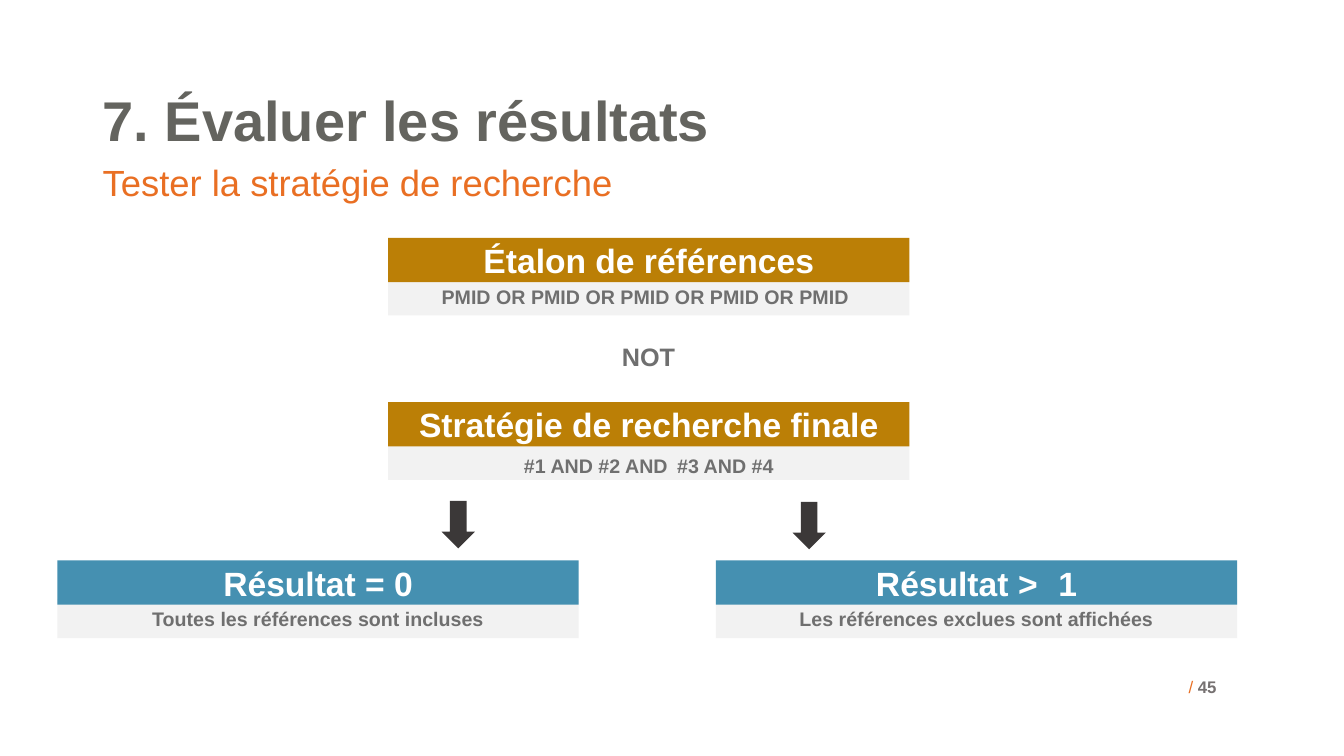
from pptx import Presentation
from pptx.dml.color import RGBColor
from pptx.enum.shapes import MSO_SHAPE
from pptx.enum.text import MSO_ANCHOR, PP_ALIGN
from pptx.util import Inches, Pt

WHITE = RGBColor(0xFF, 0xFF, 0xFF)
TITLE_GRAY = RGBColor(0x64, 0x64, 0x5F)
ORANGE = RGBColor(0xE9, 0x6F, 0x23)
NUMBER_GRAY = RGBColor(0x76, 0x71, 0x71)
TEXT_GRAY = RGBColor(0x6F, 0x6F, 0x6F)
PANEL_GRAY = RGBColor(0xF2, 0xF2, 0xF2)
OCHRE = RGBColor(0xBB, 0x7F, 0x06)
BLUE = RGBColor(0x45, 0x90, 0xB1)
ARROW_GRAY = RGBColor(0x3B, 0x38, 0x38)

CARD_WIDTH = 5.17
HEADER_HEIGHT = 0.44
PANEL_HEIGHT = 0.39
PANEL_OFFSET = 0.38


def write(shape, runs, size=14, color=TEXT_GRAY, bold=True, align=PP_ALIGN.LEFT,
          anchor=MSO_ANCHOR.TOP, wrap=True, inset=None, line_spacing=None):
    frame = shape.text_frame
    frame.word_wrap = wrap
    frame.vertical_anchor = anchor
    if inset is not None:
        frame.margin_left = frame.margin_right = Inches(inset)
        frame.margin_top = frame.margin_bottom = Inches(inset)
    paragraph = frame.paragraphs[0]
    paragraph.alignment = align
    if line_spacing:
        paragraph.line_spacing = line_spacing
    for text, changes in runs:
        run = paragraph.add_run()
        run.text = text
        run.font.name = changes.get("font", "Arial")
        run.font.size = Pt(changes.get("size", size))
        run.font.bold = changes.get("bold", bold)
        run.font.color.rgb = changes.get("color", color)


def add_label(slide, left, top, width, height, runs, **style):
    label = slide.shapes.add_textbox(Inches(left), Inches(top), Inches(width), Inches(height))
    write(label, runs, **style)


def add_block(slide, kind, left, top, width, height, fill):
    block = slide.shapes.add_shape(
        kind, Inches(left), Inches(top), Inches(width), Inches(height))
    block.shadow.inherit = False
    block.fill.solid()
    block.fill.fore_color.rgb = fill
    block.line.fill.background()
    return block


def add_card(slide, left, top, color, heading, detail):
    centered = dict(align=PP_ALIGN.CENTER, anchor=MSO_ANCHOR.MIDDLE)
    panel = add_block(slide, MSO_SHAPE.RECTANGLE, left, top + PANEL_OFFSET,
                      CARD_WIDTH, PANEL_HEIGHT, PANEL_GRAY)
    if detail:
        write(panel, detail, **centered)
    header = add_block(slide, MSO_SHAPE.RECTANGLE, left, top,
                       CARD_WIDTH, HEADER_HEIGHT, color)
    write(header, heading, size=24, color=WHITE, **centered)


def add_down_arrow(slide, left, top):
    arrow = add_block(slide, MSO_SHAPE.RIGHT_ARROW, left, top, 0.47, 0.33, ARROW_GRAY)
    arrow.rotation = 90


def main():
    deck = Presentation()
    deck.slide_width = Inches(13.33)
    deck.slide_height = Inches(7.5)
    slide = deck.slides.add_slide(deck.slide_layouts[6])

    add_label(slide, 0.92, 0.87, 11.5, 0.69, [("7. Évaluer les résultats", {})],
              size=40, color=TITLE_GRAY, line_spacing=0.9)
    add_label(slide, 0.92, 1.59, 11.5, 0.5, [("Tester la stratégie de recherche", {})],
              size=26, color=ORANGE, bold=False, line_spacing=0.9)
    add_label(slide, 11.69, 6.66, 0.72, 0.4,
              [("/ ", {"color": ORANGE, "bold": False}), ("45", {})],
              size=12, color=NUMBER_GRAY)

    search_terms = [("#1 AND #2 AND", {}),
                    (" ", {"size": 24, "color": WHITE, "bold": False}),
                    ("#3 AND #4", {})]
    excluded_heading = [("Résultat ", {}), ("> ", {"font": "Courier New"}), ("1", {})]
    cards = [
        (3.85, 2.36, OCHRE, [("Étalon de références", {})], None),
        (3.85, 3.99, OCHRE, [("Stratégie de recherche finale", {})], search_terms),
        (0.57, 5.56, BLUE, [("Résultat = 0", {})],
         [("Toutes les références sont incluses", {})]),
        (7.1, 5.56, BLUE, excluded_heading,
         [("Les références exclues sont affichées", {})]),
    ]
    for card in cards:
        add_card(slide, *card)

    add_label(slide, 4.38, 2.85, 4.41, 0.21,
              [("PMID OR PMID OR PMID OR PMID OR PMID", {})],
              anchor=MSO_ANCHOR.MIDDLE, inset=0, line_spacing=0.9)
    add_label(slide, 6.07, 3.34, 0.73, 0.4, [("NOT", {})], size=18, wrap=False)

    add_down_arrow(slide, 4.31, 5.04)
    add_down_arrow(slide, 7.79, 5.05)

    deck.save("out.pptx")


if __name__ == "__main__":
    main()
